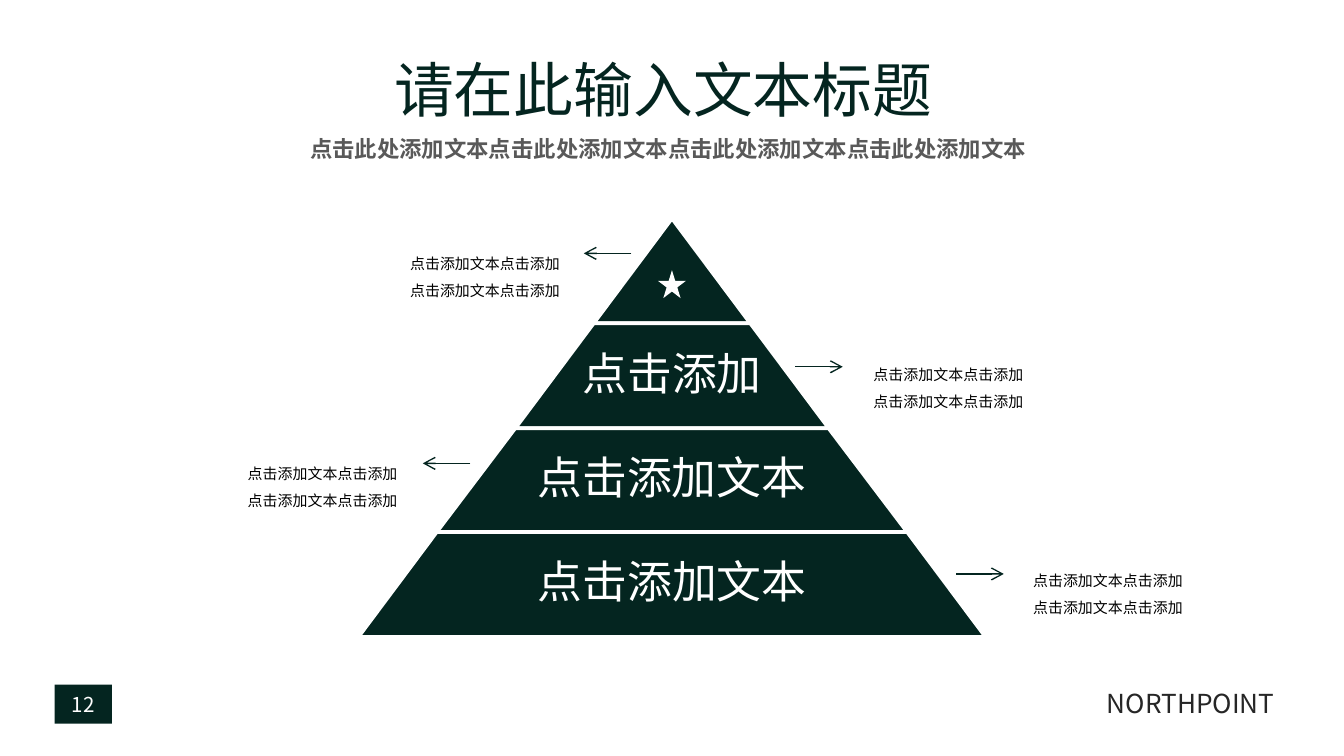
"""Build a four-tier pyramid slide with captions and arrows."""
from lxml.etree import SubElement
from pptx import Presentation
from pptx.dml.color import RGBColor
from pptx.enum.shapes import MSO_CONNECTOR as CONN, MSO_SHAPE as SHAPE
from pptx.enum.text import MSO_ANCHOR as ANCHOR, MSO_AUTO_SIZE as AUTO, PP_ALIGN as ALIGN
from pptx.oxml.ns import qn
from pptx.util import Pt

PX = 9525
DARK, WHITE = "042520", "FFFFFF"
JP, KR = "Noto Sans CJK JP", "Noto Sans CJK KR"


def rgb(value):
    return RGBColor.from_string(value)


def write(sp, text, size=8, color="000000", font=JP, bold=False, align=ALIGN.LEFT,
          anchor=ANCHOR.TOP, spacing=None, after=None, wrap=True):
    tf = sp.text_frame
    tf.auto_size, tf.word_wrap, tf.vertical_anchor = AUTO.NONE, wrap, anchor
    for i, line in enumerate(text.split("\n")):
        p = tf.add_paragraph() if i else tf.paragraphs[0]
        p.alignment, p.line_spacing, p.space_after = align, spacing, after
        r = p.add_run()
        r.text = line
        r.font.size, r.font.bold, r.font.name = Pt(size), bold, font
        r.font.color.rgb = rgb(color)
        SubElement(r._r.get_or_add_rPr(), qn("a:ea"), typeface=font)


prs = Presentation()
prs.slide_width, prs.slide_height = 960 * PX, 540 * PX
s = prs.slides.add_slide(prs.slide_layouts[5])
shapes = s.shapes

title = shapes.title
title.left, title.top, title.width, title.height = 272 * PX, 33 * PX, 494 * PX, 61 * PX
write(title, "请在此输入文本标题", size=32, color=DARK)

subtitle = shapes.add_textbox(212 * PX, 92 * PX, 534 * PX, 29 * PX)
write(subtitle, "点击此处添加文本" * 4, size=12, color="595959", bold=True, wrap=False)

footer = shapes.add_textbox(96 * PX, 478 * PX, 824 * PX, 40 * PX)
write(footer, "NORTHPOINT", size=14, color="262626", font=KR, align=ALIGN.RIGHT, anchor=ANCHOR.BOTTOM)

center, apex, height, step = 480, 156, 299, 56
for i, label in enumerate(["", "点击添加", "点击添加文本", "点击添加文本"]):
    upper, lower = i * step, (i + 1) * step
    top, bottom = [apex + round(n * height / 4) for n in (i, i + 1)]
    fb = shapes.build_freeform(center - lower, bottom, scale=PX)
    fb.add_line_segments([(center - upper, top), (center + upper, top), (center + lower, bottom)])
    tier = fb.convert_to_shape()
    tier.shadow.inherit = False
    tier.fill.solid()
    tier.fill.fore_color.rgb = rgb(DARK)
    tier.line.color.rgb = rgb(WHITE)
    tier.line.width = Pt(2)
    if label:
        tf = tier.text_frame
        tf.margin_left = tf.margin_right = round(lower * 0.37) * PX
        tf.margin_top = tf.margin_bottom = 4 * PX
        write(tier, label, size=24, color=WHITE, align=ALIGN.CENTER, anchor=ANCHOR.MIDDLE,
              spacing=0.9, after=Pt(8))

star = shapes.add_shape(SHAPE.STAR_5_POINT, 470 * PX, 193 * PX, 20 * PX, 20 * PX)
badge = shapes.add_shape(SHAPE.RECTANGLE, 39 * PX, 489 * PX, 41 * PX, 28 * PX)
for sp, color in [(star, WHITE), (badge, DARK)]:
    sp.shadow.inherit = False
    sp.fill.solid()
    sp.fill.fore_color.rgb = rgb(color)
    sp.line.fill.background()
write(badge, "12", size=11, color=WHITE, font=KR, align=ALIGN.CENTER, anchor=ANCHOR.MIDDLE)

callouts = [(278, 171, 451, 417, 181), (609, 250, 568, 602, 262),
            (162, 321, 336, 302, 331), (723, 397, 683, 717, 410)]
for left, top, start, end, y in callouts:
    caption = shapes.add_textbox(left * PX, top * PX, 137 * PX, 48 * PX)
    write(caption, "点击添加文本点击添加\n点击添加文本点击添加", align=ALIGN.CENTER, spacing=1.5)
    arrow = shapes.add_connector(CONN.STRAIGHT, start * PX, y * PX, end * PX, y * PX)
    arrow.line.color.rgb = rgb(DARK)
    arrow.line.width = Pt(0.75)
    SubElement(arrow.line._get_or_add_ln(), qn("a:tailEnd"), type="arrow")
    SubElement(arrow._element.spPr, qn("a:effectLst"))

prs.save("out.pptx")
